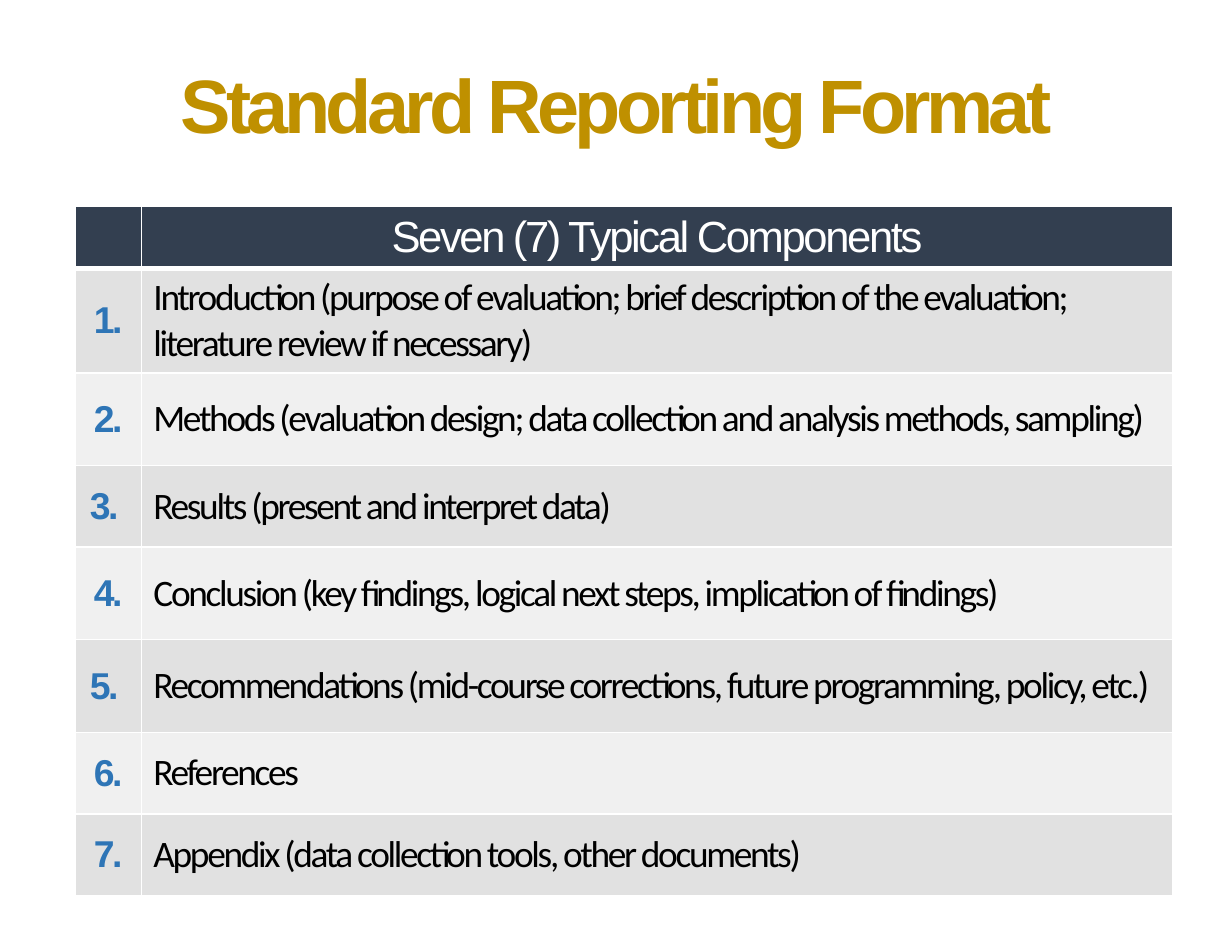
from dataclasses import dataclass

from lxml import etree
from pptx import Presentation
from pptx.dml.color import RGBColor
from pptx.enum import text
from pptx.oxml import ns
from pptx.util import Pt


@dataclass(frozen=True)
class Theme:
    gold: str = "BF9000"
    navy: str = "333F50"
    blue: str = "2E75B6"
    black: str = "000000"
    white: str = "FFFFFF"
    bands: tuple[str, str] = ("E1E1E1", "F0F0F0")
    heading_font: str = "Arial"
    body_font: str = "Calibri"
    title_size: float = 48.6
    header_size: float = 28
    body_size: float = 24
    title_spacing: float = -3
    table_spacing: float = -1.5


@dataclass(frozen=True)
class Component:
    number: str
    description: str
    height: float


THEME = Theme()
TALL, SHORT = 59.6, 52.4
HEADER_HEIGHT = 34.6
COLUMN_WIDTHS = (42.4, 663.2)
TABLE_LEFT, TABLE_TOP = 48.4, 132.8

COMPONENTS = [
    Component("1.", "Introduction (purpose of evaluation; brief description of the evaluation; "
              "literature review if necessary)", TALL),
    Component("2.", "Methods (evaluation design; data collection and analysis methods, sampling)", TALL),
    Component("3. ", "Results (present and interpret data)", SHORT),
    Component("4.", "Conclusion (key findings, logical next steps, implication of findings)", TALL),
    Component("5. ", "Recommendations (mid-course corrections, future programming, policy, etc.)", TALL),
    Component("6.", "References", SHORT),
    Component("7.", "Appendix (data collection tools, other documents)", SHORT),
]


def write_text(frame, content: str, *, size: float, color: str, font: str,
               spacing: float, bold: bool = False, centred: bool = False) -> None:
    """Fill the frame with one formatted run; spacing is between letters, in points."""
    paragraph = frame.paragraphs[0]
    paragraph.alignment = text.PP_ALIGN.CENTER if centred else text.PP_ALIGN.LEFT
    run = paragraph.add_run()
    run.text = content
    run.font.size = Pt(size)
    run.font.name = font
    run.font.bold = bold
    run.font.color.rgb = RGBColor.from_string(color)
    run._r.get_or_add_rPr().set("spc", str(round(spacing * 100)))


def style_cell(cell, fill: str, bottom_width: float = 1, top_width: float = 1) -> None:
    cell.fill.solid()
    cell.fill.fore_color.rgb = RGBColor.from_string(fill)
    cell.margin_left = cell.margin_right = Pt(7.9)
    cell.margin_top = cell.margin_bottom = Pt(4.3)
    properties = cell._tc.get_or_add_tcPr()
    widths = {"lnL": 1, "lnR": 1, "lnT": top_width, "lnB": bottom_width}
    for position, (tag, width) in enumerate(widths.items()):
        line = etree.Element(ns.qn(f"a:{tag}"), w=str(Pt(width)))
        solid = etree.SubElement(line, ns.qn("a:solidFill"))
        etree.SubElement(solid, ns.qn("a:srgbClr"), val=THEME.white)
        properties.insert(position, line)


def add_title(slide, content: str) -> None:
    title = slide.shapes.title
    title.left, title.top, title.width, title.height = Pt(90), Pt(21.6), Pt(612), Pt(90)
    title.text_frame.auto_size = text.MSO_AUTO_SIZE.NONE
    title.text_frame.vertical_anchor = text.MSO_ANCHOR.MIDDLE
    write_text(title.text_frame, content, size=THEME.title_size, color=THEME.gold,
               font=THEME.heading_font, spacing=THEME.title_spacing, bold=True, centred=True)


def add_component_table(slide, heading: str, components: list[Component]) -> None:
    heights = [HEADER_HEIGHT] + [component.height for component in components]
    table = slide.shapes.add_table(
        len(heights), len(COLUMN_WIDTHS), Pt(TABLE_LEFT), Pt(TABLE_TOP),
        Pt(sum(COLUMN_WIDTHS)), Pt(sum(heights))).table
    for column, width in zip(table.columns, COLUMN_WIDTHS):
        column.width = Pt(width)
    for row, height in zip(table.rows, heights):
        row.height = Pt(height)

    for cell in table.rows[0].cells:
        style_cell(cell, THEME.navy, bottom_width=3)
    write_text(table.cell(0, 1).text_frame, heading, size=THEME.header_size, color=THEME.white,
               font=THEME.heading_font, spacing=THEME.table_spacing, centred=True)

    for index, component in enumerate(components, start=1):
        number, description = table.rows[index].cells
        for cell in (number, description):
            style_cell(cell, THEME.bands[(index - 1) % 2], top_width=3 if index == 1 else 1)
            cell.vertical_anchor = text.MSO_ANCHOR.MIDDLE
        write_text(number.text_frame, component.number, size=THEME.body_size, color=THEME.blue,
                   font=THEME.heading_font, spacing=THEME.table_spacing, bold=True, centred=True)
        write_text(description.text_frame, component.description, size=THEME.body_size,
                   color=THEME.black, font=THEME.body_font, spacing=THEME.table_spacing)


def main() -> None:
    presentation = Presentation()
    presentation.slide_width, presentation.slide_height = Pt(792), Pt(612)
    slide = presentation.slides.add_slide(presentation.slide_layouts.get_by_name("Title Only"))
    add_title(slide, "Standard Reporting Format")
    add_component_table(slide, "Seven (7) Typical Components", COMPONENTS)
    presentation.save("out.pptx")


if __name__ == "__main__":
    main()
